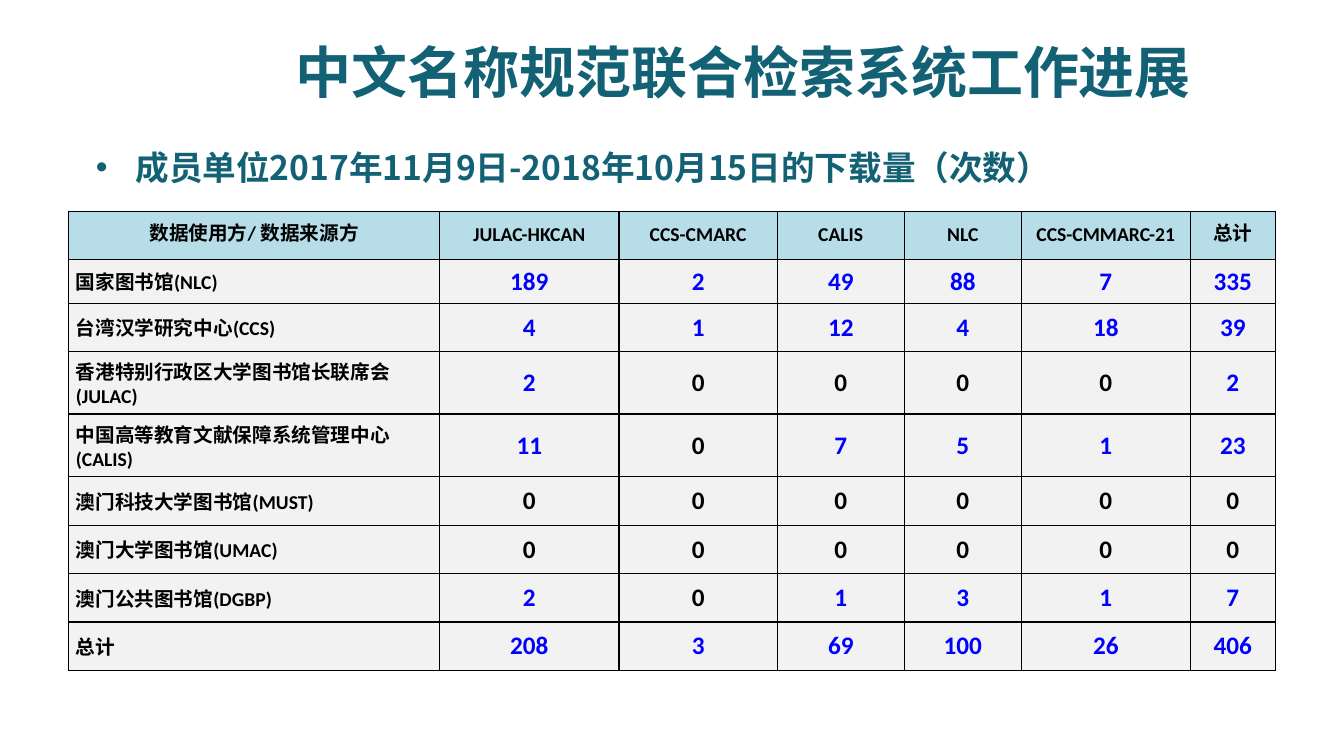
"""Build the slide reporting downloads by member library."""
from lxml.etree import SubElement
from pptx import Presentation
from pptx.dml.color import RGBColor
from pptx.enum.text import MSO_ANCHOR, MSO_AUTO_SIZE, PP_ALIGN
from pptx.oxml.ns import qn
from pptx.util import Cm, Pt

TEAL = RGBColor(0x12, 0x61, 0x74)
BLUE = RGBColor(0x00, 0x00, 0xFF)
BLACK = RGBColor(0x00, 0x00, 0x00)
HEADER_FILL = RGBColor(0xB7, 0xDE, 0xE8)
BODY_FILL = RGBColor(0xF2, 0xF2, 0xF2)
CJK = "Noto Sans CJK SC"

HEADERS = ["数据使用方/ 数据来源方", "JULAC-HKCAN", "CCS-CMARC", "CALIS", "NLC",
           "CCS-CMMARC-21", "总计"]
DOWNLOADS = [
    ("国家图书馆(NLC)", 189, 2, 49, 88, 7, 335),
    ("台湾汉学研究中心(CCS)", 4, 1, 12, 4, 18, 39),
    ("香港特别行政区大学图书馆长联席会(JULAC)", 2, 0, 0, 0, 0, 2),
    ("中国高等教育文献保障系统管理中心(CALIS)", 11, 0, 7, 5, 1, 23),
    ("澳门科技大学图书馆(MUST)", 0, 0, 0, 0, 0, 0),
    ("澳门大学图书馆(UMAC)", 0, 0, 0, 0, 0, 0),
    ("澳门公共图书馆(DGBP)", 2, 0, 1, 3, 1, 7),
    ("总计", 208, 3, 69, 100, 26, 406),
]
COL_WIDTHS = [9.35, 4.52, 3.99, 3.2, 2.95, 4.26, 2.14]
ROW_HEIGHTS = [1.2, 1.12, 1.2, 1.37, 1.4] + [1.22] * 4


def write(p, text, size, color, latin):
    r = p.add_run()
    r.text = text
    for name, value in {"size": Pt(size), "bold": True, "name": latin}.items():
        setattr(r.font, name, value)
    r.font.color.rgb = color
    SubElement(r.font._element, qn("a:ea")).set("typeface", CJK)


def add_borders(cell):
    tcPr = cell._tc.get_or_add_tcPr()
    for side in ("lnL", "lnR", "lnT", "lnB"):
        ln = SubElement(tcPr, qn(f"a:{side}"), w=str(Pt(1)))
        fill = SubElement(ln, qn("a:solidFill"))
        SubElement(fill, qn("a:srgbClr"), val=str(BLACK))


prs = Presentation()
prs.slide_width, prs.slide_height = Cm(33.87), Cm(19.05)
s = prs.slides.add_slide(prs.slide_layouts[1])

title, body = s.shapes.title, s.placeholders[1]
for sp, box in ((title, (5.16, 0.61, 27.15, 2.36)), (body, (2.16, 3.58, 32.41, 3.07))):
    for name, value in zip(("left", "top", "width", "height"), box):
        setattr(sp, name, Cm(value))
    sp.text_frame.auto_size = MSO_AUTO_SIZE.NONE

title.text_frame.vertical_anchor = MSO_ANCHOR.MIDDLE
p = title.text_frame.paragraphs[0]
p.alignment = PP_ALIGN.CENTER
write(p, "中文名称规范联合检索系统工作进展", 40, TEAL, CJK)

p = body.text_frame.paragraphs[0]
p.space_before = Pt(0)
pPr = p._p.get_or_add_pPr()
pPr.set("marL", str(Cm(1)))
pPr.set("indent", str(-Cm(1)))
SubElement(pPr, qn("a:buFont"), typeface="Arial")
SubElement(pPr, qn("a:buChar"), char="•")
write(p, "成员单位2017年11月9日-2018年10月15日的下载量（次数）", 24, TEAL, CJK)

table = s.shapes.add_table(len(ROW_HEIGHTS), len(COL_WIDTHS), Cm(1.73), Cm(5.33),
                           Cm(sum(COL_WIDTHS)), Cm(sum(ROW_HEIGHTS))).table
for column, width in zip(table.columns, COL_WIDTHS):
    column.width = Cm(width)
for row, height in zip(table.rows, ROW_HEIGHTS):
    row.height = Cm(height)

for i, values in enumerate([HEADERS] + DOWNLOADS):
    for j, value in enumerate(values):
        cell = table.cell(i, j)
        add_borders(cell)
        cell.fill.solid()
        cell.fill.fore_color.rgb = BODY_FILL if i else HEADER_FILL
        cell.vertical_anchor = MSO_ANCHOR.MIDDLE
        p = cell.text_frame.paragraphs[0]
        p.alignment = PP_ALIGN.CENTER
        size, color, mx, my = 14, BLACK, 0.25, 0
        if i == 0:
            p.line_spacing = Pt(16)
        elif j == 0:
            p.alignment = PP_ALIGN.LEFT
            mx, my = 0.18, 0.13
        else:
            size, color, mx = 18, BLUE if value else BLACK, 0
        cell.margin_left = cell.margin_right = Cm(mx)
        cell.margin_top = cell.margin_bottom = Cm(my)
        write(p, str(value), size, color, "Calibri")

prs.save("out.pptx")
